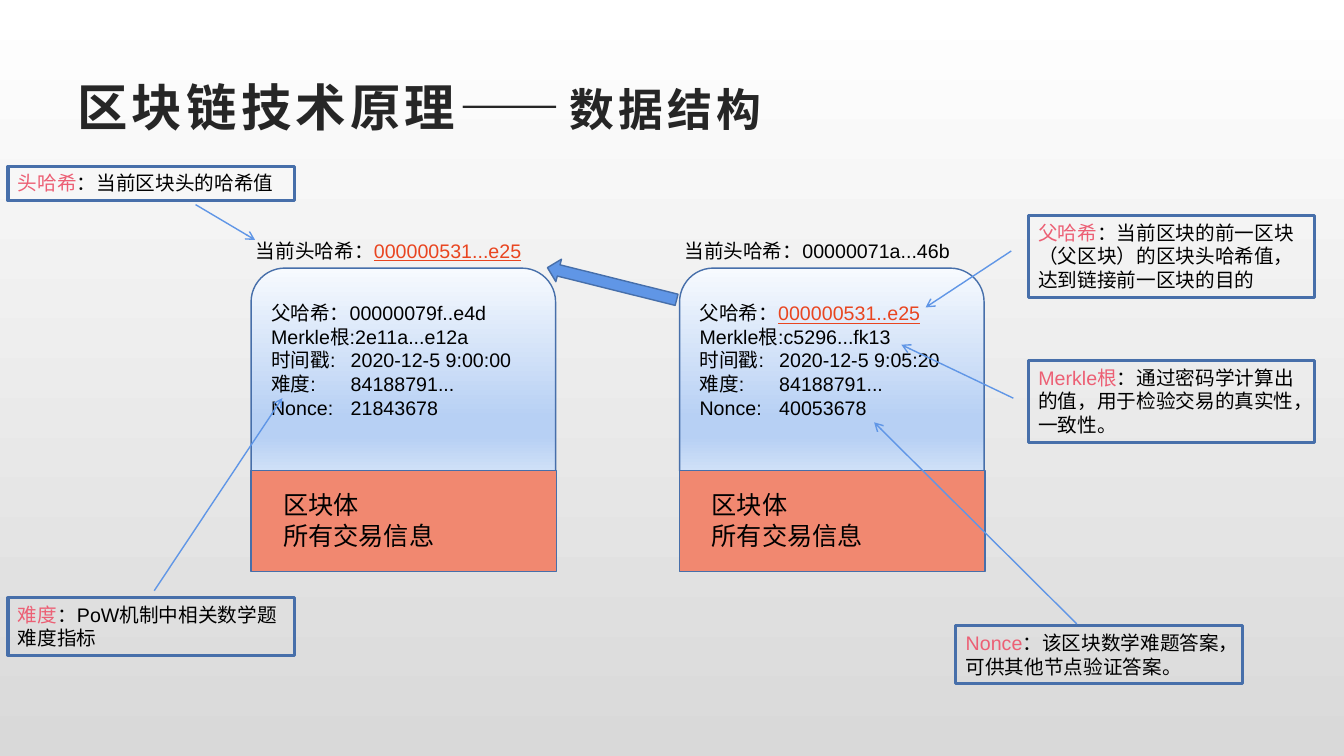
from pptx import Presentation
from pptx.util import Inches, Pt
from pptx.dml.color import RGBColor
from pptx.enum.shapes import MSO_CONNECTOR, MSO_SHAPE
from pptx.enum.text import MSO_ANCHOR, PP_ALIGN
from pptx.oxml.ns import qn
from lxml import etree
from copy import deepcopy

COLORS = {
    "title": "262626", "text": "000000", "term": "EC5F74", "hash": "E94520",
    "outline": "476FAA", "arrow": "6096E6", "body": "F18870",
}
PAGE_GRADIENT = [(0, "FFFFFF"), (1, "D9D9D9")]
HEAD_GRADIENT = [(0, "F7FAFE"), (0.74, "B7D0F4"), (0.83, "B7D0F4"), (1, "CFE0F7")]

# Each paragraph is a list of (text, colour name) runs
TITLE = [("区块链技术原理——", 36), ("数据结构", 32)]
BODY = [[("区块体", "text")], [("所有交易信息", "text")]]
BLOCKS = [  # left, current hash, header fields
    (2.49, [("当前头哈希：", "text"), ("000000531...e25", "hash")],
     [[("父哈希：00000079f..e4d", "text")],
      [("Merkle根:2e11a...e12a", "text")],
      [("时间戳:\t2020-12-5 9:00:00", "text")],
      [("难度:\t84188791...", "text")],
      [("Nonce:\t21843678", "text")]]),
    (6.74, [("当前头哈希：00000071a...46b", "text")],
     [[("父哈希：", "text"), ("000000531..e25", "hash")],
      [("Merkle根:c5296...fk13", "text")],
      [("时间戳:\t2020-12-5 9:05:20", "text")],
      [("难度:\t84188791...", "text")],
      [("Nonce:\t40053678", "text")]]),
]
NOTES = [  # left, top, height, term, explanation
    (0.08, 1.65, 0.34, "头哈希", "：当前区块头的哈希值"),
    (10.2, 2.14, 0.81, "父哈希",
     "：当前区块的前一区块（父区块）的区块头哈希值，达到链接前一区块的目的"),
    (0.08, 5.93, 0.57, "难度", "：PoW机制中相关数学题难度指标"),
    (9.48, 6.21, 0.57, "Nonce", "：该区块数学难题答案，可供其他节点验证答案。"),
    (10.2, 3.58, 0.81, "Merkle根", "：通过密码学计算出的值，用于检验交易的真实性，一致性。"),
]
POINTERS = [  # from x, y, to x, y
    (1.94, 2.03, 2.53, 2.38),
    (10.03, 2.49, 9.18, 3.05),
    (10.05, 3.95, 8.94, 3.42),
    (10.68, 6.19, 8.67, 4.19),
    (1.53, 5.86, 2.8, 3.95),
]
NOTE_W, HEAD_W, BODY_W, TAB = 2.84, 3.02, 3.03, 0.79


def rgb(name):
    return RGBColor.from_string(COLORS[name])


def set_gradient(fill, element, stops):
    fill.gradient()
    fill.gradient_angle = 270
    stop_list = element.find(".//" + qn("a:gsLst"))
    for _ in stops[2:]:
        stop_list.append(deepcopy(stop_list[0]))
    for stop, (position, color) in zip(fill.gradient_stops, stops):
        stop.position = position
        stop.color.rgb = RGBColor.from_string(color)


def add_shape(s, kind, x, y, w, h, fill=None, line_pt=1):
    sp = s.shapes.add_shape(kind, Inches(x), Inches(y), Inches(w), Inches(h))
    sp.shadow.inherit = False
    sp.line.color.rgb = rgb("outline")
    sp.line.width = Pt(line_pt)
    if fill:
        sp.fill.solid()
        sp.fill.fore_color.rgb = rgb(fill)
    else:
        sp.fill.background()
    return sp


def add_box(s, x, y, w, h):
    return s.shapes.add_textbox(Inches(x), Inches(y), Inches(w), Inches(h))


def write(sp, paragraphs, size):
    tf = sp.text_frame
    tf.word_wrap = True
    tf.vertical_anchor = MSO_ANCHOR.TOP
    for i, runs in enumerate(paragraphs):
        p = tf.add_paragraph() if i else tf.paragraphs[0]
        p.alignment = PP_ALIGN.LEFT
        if any("\t" in text for text, _ in runs):
            tabs = etree.SubElement(p._p.get_or_add_pPr(), qn("a:tabLst"))
            etree.SubElement(tabs, qn("a:tab"), pos=str(Inches(TAB)), algn="l")
        p.font.name = "Arial"
        p.font.size = Pt(size)
        for text, color in runs:
            r = p.add_run()
            r.text = text
            r.font.color.rgb = rgb(color)
            if color == "hash":
                r.font.underline = True


def add_title(s):
    tf = add_box(s, 0.67, 0.67, 12, 0.77).text_frame
    tf.word_wrap = True
    tf.vertical_anchor = MSO_ANCHOR.MIDDLE
    p = tf.paragraphs[0]
    p.font.name = "Arial"
    p.font.bold = True
    p.font.color.rgb = rgb("title")
    for text, size in TITLE:
        r = p.add_run()
        r.text = text
        r.font.size = Pt(size)
        r._r.get_or_add_rPr().set("spc", "300")


def add_block(s, x, current_hash, fields):
    head = add_shape(s, MSO_SHAPE.ROUND_2_SAME_RECTANGLE, x, 2.66, HEAD_W, 2.01)
    set_gradient(head.fill, head._element, HEAD_GRADIENT)
    write(add_box(s, x + 0.1, 2.94, BODY_W, 1.28), fields, 14)
    add_shape(s, MSO_SHAPE.RECTANGLE, x, 4.67, BODY_W, 1, "body")
    write(add_box(s, x + 0.22, 4.81, 1.97, 0.71), BODY, 18)
    write(add_box(s, x - 0.05, 2.32, 3.33, 0.34), [current_hash], 14)


def add_pointer(s, x1, y1, x2, y2):
    line = s.shapes.add_connector(MSO_CONNECTOR.STRAIGHT, Inches(x1), Inches(y1),
                                  Inches(x2), Inches(y2))
    line.line.color.rgb = rgb("arrow")
    line.line.width = Pt(1)
    etree.SubElement(line.line._get_or_add_ln(), qn("a:tailEnd"), type="arrow")
    etree.SubElement(line._element.spPr, qn("a:effectLst"))


def main():
    prs = Presentation()
    prs.slide_width, prs.slide_height = Inches(13.33), Inches(7.5)
    s = prs.slides.add_slide(prs.slide_layouts[6])
    set_gradient(s.background.fill, s._element, PAGE_GRADIENT)
    add_title(s)

    # Two chained blocks and the link between them
    for block in BLOCKS:
        add_block(s, *block)
    link = add_shape(s, MSO_SHAPE.LEFT_ARROW, 5.41, 2.7, 1.32, 0.23, "arrow")
    link.rotation = 14

    # Explanations and their pointers
    for x, y, h, term, meaning in NOTES:
        note = add_shape(s, MSO_SHAPE.RECTANGLE, x, y, NOTE_W, h, line_pt=2.25)
        write(note, [[(term, "term"), (meaning, "text")]], 14)
    for pointer in POINTERS:
        add_pointer(s, *pointer)

    prs.save("out.pptx")


if __name__ == "__main__":
    main()
